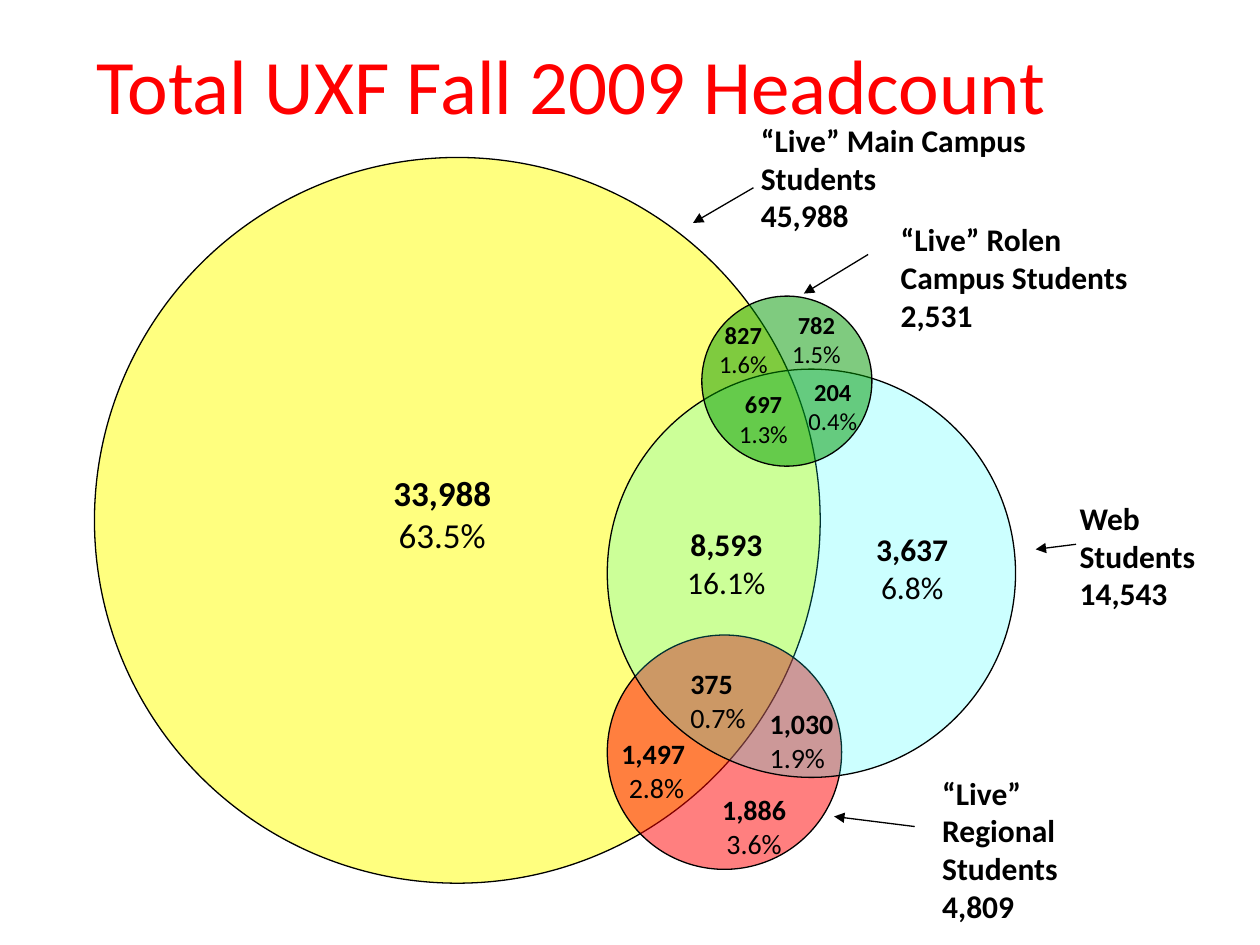
from dataclasses import dataclass

from lxml import etree
from pptx import Presentation
from pptx.dml.color import RGBColor
from pptx.enum import shapes, text
from pptx.oxml import ns
from pptx.util import Inches, Pt


@dataclass(frozen=True)
class Theme:
    font: str = "Calibri"
    ink: str = "000000"
    title: str = "FF0000"
    main: str = "FFFF00"
    regional: str = "FF0000"
    web: str = "00FFFF"
    rolen: str = "009900"
    line: float = 0.75
    head: int = 44
    label: int = 18
    large: int = 20
    medium: int = 16
    small: int = 14


def add(parent, tag, **attrs):
    return etree.SubElement(parent, ns.qn(tag), **attrs)


class Venn:
    def __init__(self, theme, slide):
        self.theme = theme
        self.slide = slide

    def stroke(self, line):
        line.color.rgb = RGBColor.from_string(self.theme.ink)
        line.width = Pt(self.theme.line)

    def circle(self, left, top, size, color, alpha, turn=0):
        """Add a see-through circle; alpha is its opacity in percent."""
        disc = self.slide.shapes.add_shape(
            shapes.MSO_SHAPE.OVAL, Inches(left), Inches(top), Inches(size), Inches(size))
        disc.shadow.inherit = False
        disc.rotation = turn
        disc.fill.solid()
        disc.fill.fore_color.rgb = RGBColor.from_string(color)
        tone = disc.fill._xPr.find(ns.qn("a:solidFill"))[0]
        add(tone, "a:alpha", val=str(alpha * 1000))
        self.stroke(disc.line)

    def text(self, box, lines, size, bold, color=None, center=False):
        """Add one paragraph per line; bold holds one flag per line."""
        frame = self.slide.shapes.add_textbox(*map(Inches, box)).text_frame
        frame.word_wrap = True
        frame.text = "\n".join(lines)
        for para, heavy in zip(frame.paragraphs, bold):
            para.alignment = text.PP_ALIGN.CENTER if center else text.PP_ALIGN.LEFT
            font = para.runs[0].font
            font.name = self.theme.font
            font.size = Pt(size)
            font.bold = heavy
            font.color.rgb = RGBColor.from_string(color or self.theme.ink)

    def title(self, box, words):
        self.text(box, [words], self.theme.head, [False], self.theme.title)

    def label(self, box, name, total):
        self.text(box, [name, total], self.theme.label, [True, True])

    def count(self, left, top, width, number, share, size, center=True):
        self.text((left, top, width, 0.42), [number, share], size,
                  [True, False], center=center)

    def arrow(self, *ends):
        link = self.slide.shapes.add_connector(
            shapes.MSO_CONNECTOR.STRAIGHT, *map(Inches, ends))
        self.stroke(link.line)
        add(link.line._get_or_add_ln(), "a:tailEnd", type="triangle")
        add(link._element.spPr, "a:effectLst")


def main():
    deck = Presentation()
    deck.slide_width, deck.slide_height = Inches(10), Inches(7.5)
    theme = Theme()
    venn = Venn(theme, deck.slides.add_slide(deck.slide_layouts[6]))

    venn.title((0.67, 0.25, 8.92, 1.08), "Total UXF Fall 2009 Headcount")

    venn.circle(0.75, 1.25, 5.76, theme.main, 50)
    venn.circle(4.82, 5.04, 1.86, theme.regional, 50)
    venn.circle(4.82, 2.93, 3.24, theme.web, 20)
    venn.circle(5.57, 2.35, 1.35, theme.rolen, 50, turn=35)

    labels = [
        ((5.94, 0.91, 2.42, 0.36), "“Live” Main Campus Students", "45,988"),
        ((7.05, 1.7, 2.32, 0.44), "“Live” Rolen Campus Students", "2,531"),
        ((8.47, 3.91, 1.35, 0.43), "Web Students", "14,543"),
        ((7.38, 6.09, 1.46, 0.58), "“Live” Regional Students", "4,809"),
    ]
    for item in labels:
        venn.label(*item)

    counts = [
        (2.97, 3.69, 1.08, "33,988", "63.5%", theme.large),
        (5.26, 4.12, 1.01, "8,593", "16.1%", theme.label),
        (6.8, 4.16, 0.88, "3,637", "6.8%", theme.label),
        (5.38, 5.24, 0.72, "375", "0.7%", theme.medium, False),
        (6.01, 5.56, 0.88, "1,030", "1.9%", theme.medium, False),
        (4.76, 5.8, 0.85, "1,497", " 2.8%", theme.medium),
        (5.48, 6.24, 1.01, "1,886", "3.6%", theme.medium),
        (5.55, 2.49, 0.7, "827", "1.6%", theme.small),
        (5.71, 3.04, 0.7, "697", "1.3%", theme.small),
        (6.15, 2.41, 0.66, "782", "1.5%", theme.small),
        (6.26, 2.94, 0.7, "204", "0.4%", theme.small),
    ]
    for item in counts:
        venn.count(*item)

    arrows = [
        (5.98, 1.49, 5.5, 1.77),
        (6.89, 2.02, 6.38, 2.33),
        (8.54, 4.32, 8.22, 4.36),
        (7.26, 6.56, 6.62, 6.48),
    ]
    for ends in arrows:
        venn.arrow(*ends)

    deck.save("out.pptx")


if __name__ == "__main__":
    main()
